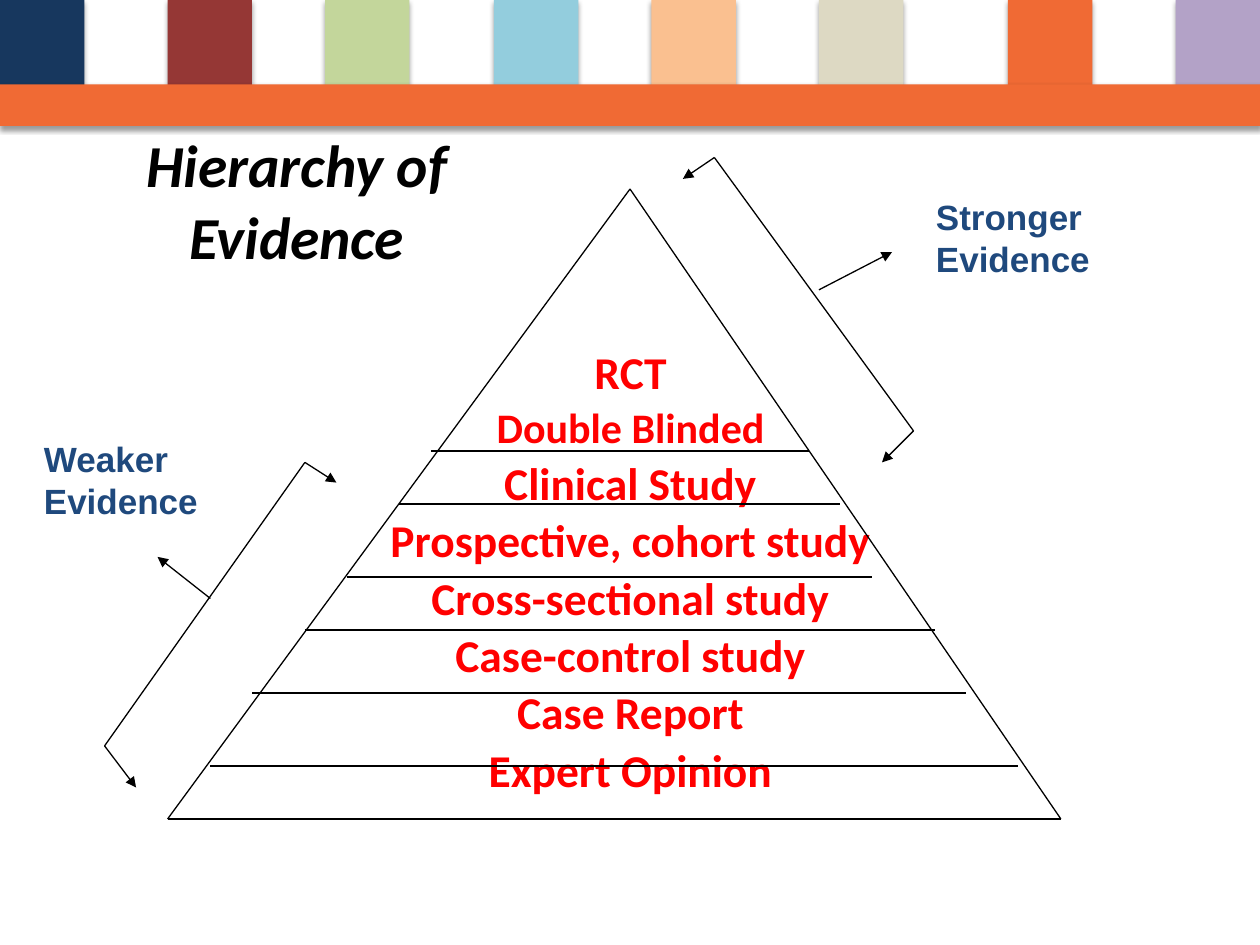
from dataclasses import dataclass

from lxml.etree import SubElement
from pptx import Presentation
from pptx.dml.color import RGBColor
from pptx.enum.shapes import MSO_CONNECTOR, MSO_SHAPE
from pptx.enum.text import MSO_ANCHOR, PP_ALIGN
from pptx.oxml.ns import qn
from pptx.slide import Slide
from pptx.util import Inches, Pt

BLACK = RGBColor(0x00, 0x00, 0x00)
RED = RGBColor(0xFF, 0x00, 0x00)
BLUE = RGBColor(0x1F, 0x49, 0x7D)
ORANGE = RGBColor(0xF0, 0x6A, 0x34)
NAVY = RGBColor(0x17, 0x37, 0x5E)
MAROON = RGBColor(0x95, 0x37, 0x35)
GREEN = RGBColor(0xC3, 0xD6, 0x9B)
AQUA = RGBColor(0x93, 0xCD, 0xDD)
PEACH = RGBColor(0xFA, 0xC0, 0x90)
TAN = RGBColor(0xDD, 0xD9, 0xC3)
LILAC = RGBColor(0xB3, 0xA2, 0xC7)

TITLE_FORMAT = {"name": "Calibri", "size": Pt(34), "bold": True, "italic": True}
LEVEL_FORMAT = {"name": "Calibri", "size": Pt(26), "bold": True}
SMALL_LEVEL_FORMAT = LEVEL_FORMAT | {"size": Pt(24)}
LABEL_FORMAT = {"name": "Arial", "size": Pt(20), "bold": True}


@dataclass(frozen=True)
class Block:
    left: float
    top: float
    width: float
    height: float
    color: RGBColor


@dataclass(frozen=True)
class Line:
    start: tuple[float, float]
    end: tuple[float, float]
    arrow: bool = False


@dataclass(frozen=True)
class TextLine:
    text: str
    format: dict
    color: RGBColor


@dataclass(frozen=True)
class TextBlock:
    left: float
    top: float
    width: float
    height: float
    lines: list[TextLine]
    alignment: PP_ALIGN = PP_ALIGN.LEFT
    anchor: MSO_ANCHOR = MSO_ANCHOR.TOP
    line_spacing: float = 1.0
    space_before: float = 0


BAR_COLORS = {0: NAVY, 1.33: MAROON, 2.58: GREEN, 3.92: AQUA,
              5.17: PEACH, 6.5: TAN, 8: ORANGE, 9.33: LILAC}
BANNER = [Block(left, 0, 0.67, 0.75, color) for left, color in BAR_COLORS.items()]
BANNER.append(Block(0, 0.67, 10, 0.33, ORANGE))

APEX, LEFT_CORNER, RIGHT_CORNER = (5, 1.5), (1.33, 6.5), (8.42, 6.5)
PYRAMID = [Line(APEX, LEFT_CORNER), Line(LEFT_CORNER, RIGHT_CORNER),
           Line(APEX, RIGHT_CORNER)]

# Height, left end and right end of each divider
DIVIDERS = [(3.58, 3.42, 6.42), (4, 3.17, 6.67), (4.58, 2.75, 6.92),
            (5, 2.42, 7.42), (5.5, 2, 7.67), (6.08, 1.67, 8.08)]
DIVIDER_LINES = [Line((left, y), (right, y)) for y, left, right in DIVIDERS]

LEVELS = ["RCT", "Double Blinded", "Clinical Study", "Prospective, cohort study",
          "Cross-sectional study", "Case-control study", "Case Report",
          "Expert Opinion"]
LEVEL_LINES = [
    TextLine(level, SMALL_LEVEL_FORMAT if level == "Double Blinded" else LEVEL_FORMAT, RED)
    for level in LEVELS
]

TITLE = TextBlock(0.55, 0.92, 3.61, 1.33,
                  [TextLine("Hierarchy of Evidence", TITLE_FORMAT, BLACK)],
                  PP_ALIGN.CENTER, MSO_ANCHOR.MIDDLE)
LEVEL_TEXT = TextBlock(0.42, 2.73, 9.17, 4.35, LEVEL_LINES, PP_ALIGN.CENTER,
                       line_spacing=0.9, space_before=4.7)
WEAKER = TextBlock(0.25, 3.42, 1.58, 0.77,
                   [TextLine("Weaker Evidence", LABEL_FORMAT, BLUE)])
STRONGER = TextBlock(7.33, 1.5, 1.67, 0.77,
                     [TextLine("Stronger Evidence", LABEL_FORMAT, BLUE)])


def bracket(top: tuple[float, float], bottom: tuple[float, float],
            top_tip: tuple[float, float], bottom_tip: tuple[float, float],
            pointer: Line) -> list[Line]:
    return [Line(top, bottom), Line(bottom, bottom_tip, True),
            Line(top, top_tip, True), pointer]


WEAKER_BRACKET = bracket((2.42, 3.67), (0.83, 5.92), (2.67, 3.83), (1.08, 6.25),
                         Line((1.67, 4.75), (1.25, 4.42), True))
STRONGER_BRACKET = bracket((5.67, 1.25), (7.25, 3.42), (5.42, 1.42), (7, 3.67),
                           Line((6.5, 2.3), (7.08, 2), True))


def draw_block(slide: Slide, block: Block) -> None:
    shape = slide.shapes.add_shape(
        MSO_SHAPE.RECTANGLE, Inches(block.left), Inches(block.top),
        Inches(block.width), Inches(block.height))
    shape.fill.solid()
    shape.fill.fore_color.rgb = block.color
    shape.line.fill.background()
    # Soft shadow straight below the block
    shape.shadow.inherit = False
    effects = shape._element.spPr.find(qn("a:effectLst"))
    shadow = SubElement(effects, qn("a:outerShdw"), blurRad=str(Pt(3.1)),
                        dist=str(Pt(1.6)), dir="5400000", rotWithShape="0")
    color = SubElement(shadow, qn("a:srgbClr"), val=str(BLACK))
    SubElement(color, qn("a:alpha"), val="38000")


def draw_line(slide: Slide, line: Line) -> None:
    connector = slide.shapes.add_connector(
        MSO_CONNECTOR.STRAIGHT, *map(Inches, line.start + line.end))
    connector.line.color.rgb = BLACK
    connector.line.width = Pt(0.75)
    properties = connector._element.spPr
    if line.arrow:
        SubElement(properties.find(qn("a:ln")), qn("a:tailEnd"), type="triangle")
    SubElement(properties, qn("a:effectLst"))


def draw_text(slide: Slide, block: TextBlock) -> None:
    shape = slide.shapes.add_textbox(
        Inches(block.left), Inches(block.top), Inches(block.width), Inches(block.height))
    frame = shape.text_frame
    frame.word_wrap = True
    frame.vertical_anchor = block.anchor
    for index, line in enumerate(block.lines):
        paragraph = frame.add_paragraph() if index else frame.paragraphs[0]
        paragraph.alignment = block.alignment
        paragraph.line_spacing = block.line_spacing
        paragraph.space_before = Pt(block.space_before if index else 0)
        run = paragraph.add_run()
        run.text = line.text
        for attribute, value in line.format.items():
            setattr(run.font, attribute, value)
        run.font.color.rgb = line.color


def main() -> None:
    presentation = Presentation()
    presentation.slide_width = Inches(10)
    presentation.slide_height = Inches(7.5)
    slide = presentation.slides.add_slide(presentation.slide_layouts[6])

    # Banner
    for block in BANNER:
        draw_block(slide, block)

    # Title and evidence levels
    draw_text(slide, TITLE)
    draw_text(slide, LEVEL_TEXT)

    # Pyramid
    for line in PYRAMID + DIVIDER_LINES:
        draw_line(slide, line)

    # Labelled brackets
    for label, lines in ((WEAKER, WEAKER_BRACKET), (STRONGER, STRONGER_BRACKET)):
        draw_text(slide, label)
        for line in lines:
            draw_line(slide, line)

    presentation.save("out.pptx")


if __name__ == "__main__":
    main()
